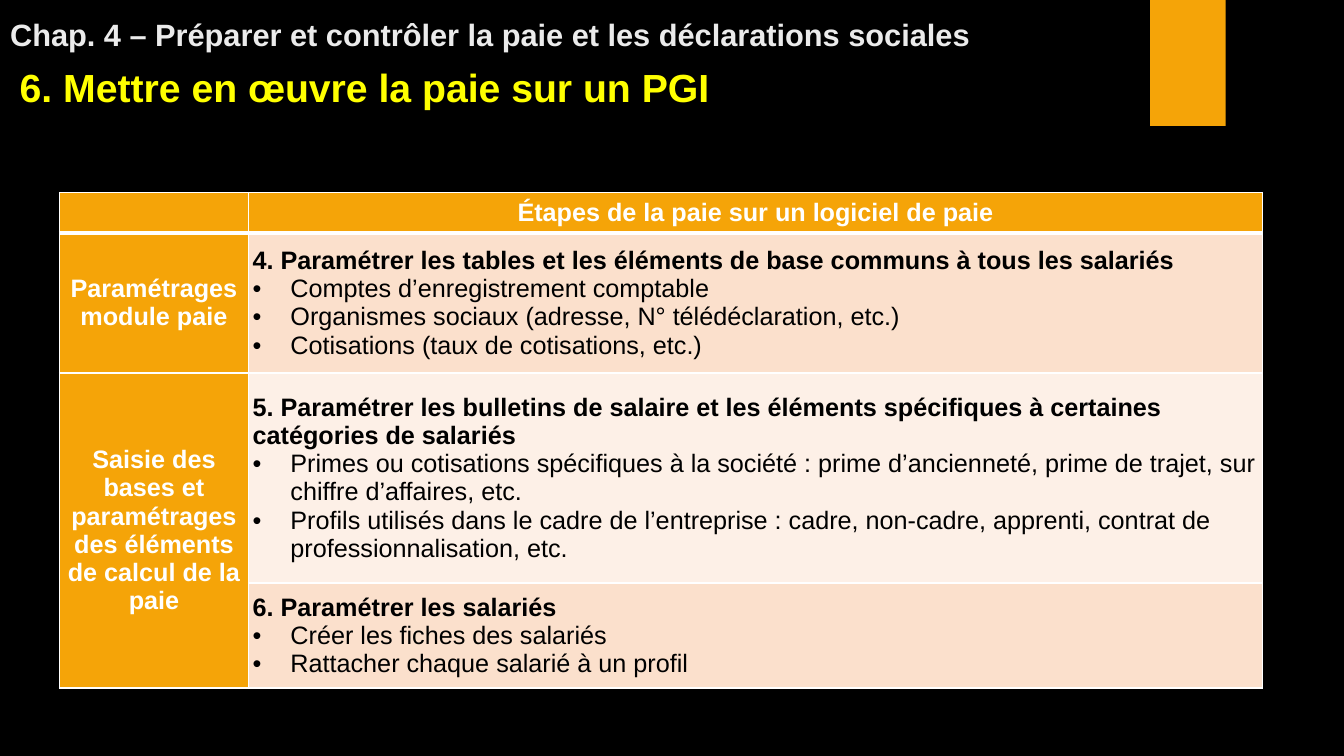
from lxml import etree
from pptx import Presentation
from pptx.dml.color import RGBColor
from pptx.enum.shapes import MSO_SHAPE
from pptx.enum.text import MSO_ANCHOR, PP_ALIGN
from pptx.oxml.ns import qn
from pptx.util import Pt

RECT = MSO_SHAPE.RECTANGLE
MIDDLE, BOTTOM = MSO_ANCHOR.MIDDLE, MSO_ANCHOR.BOTTOM
LEFT, CENTER = PP_ALIGN.LEFT, PP_ALIGN.CENTER
ORANGE, PEACH, CREAM = "F5A408", "FBE0CC", "FDF0E7"
WHITE, BLACK, YELLOW, PALE = "FFFFFF", "000000", "FFFF00", "EBEBEB"
INDENT = 27

STEPS = [
    ("Paramétrages module paie", PEACH,
     "4. Paramétrer les tables et les éléments de base communs à tous les salariés",
     ["Comptes d’enregistrement comptable",
      "Organismes sociaux (adresse, N° télédéclaration, etc.)",
      "Cotisations (taux de cotisations, etc.)"]),
    ("Saisie des bases et paramétrages des éléments de calcul de la paie", CREAM,
     "5. Paramétrer les bulletins de salaire et les éléments spécifiques à certaines "
     "catégories de salariés",
     ["Primes ou cotisations spécifiques à la société : prime d’ancienneté, "
      "prime de trajet, sur chiffre d’affaires, etc.",
      "Profils utilisés dans le cadre de l’entreprise : cadre, non-cadre, "
      "apprenti, contrat de professionnalisation, etc."]),
    ("", PEACH, "6. Paramétrer les salariés",
     ["Créer les fiches des salariés", "Rattacher chaque salarié à un profil"]),
]


def color(code):
    return RGBColor.from_string(code)


def assign(item, values):
    for name, value in values.items():
        setattr(item, name, value)


class Page:
    def __init__(self, deck, font):
        self.font = font
        self.slide = deck.slides.add_slide(deck.slide_layouts[5])
        self.paint(self.slide.background, BLACK)

    def paint(self, item, code):
        item.fill.solid()
        item.fill.fore_color.rgb = color(code)

    def phrase(self, para, text, size, code, bold=True, align=LEFT):
        para.alignment = align
        run = para.add_run()
        run.text = text
        assign(run.font, {"name": self.font, "size": Pt(size), "bold": bold})
        run.font.color.rgb = color(code)

    def title(self, text, box, size, code):
        shape = self.slide.shapes.title
        assign(shape, dict(zip(("left", "top", "width", "height"), map(Pt, box))))
        assign(shape.text_frame, {"vertical_anchor": BOTTOM, "word_wrap": True})
        self.phrase(shape.text_frame.paragraphs[0], text, size, code)

    def text(self, text, box, size, code):
        frame = self.slide.shapes.add_textbox(*map(Pt, box)).text_frame
        frame.word_wrap = True
        self.phrase(frame.paragraphs[0], text, size, code)

    def block(self, box, code):
        shape = self.slide.shapes.add_shape(RECT, *map(Pt, box))
        shape.shadow.inherit = False
        self.paint(shape, code)
        shape.line.fill.background()

    def table(self, box, cols, rows):
        grid = self.slide.shapes.add_table(len(rows), len(cols), *map(Pt, box)).table
        for col, width in zip(grid.columns, cols):
            col.width = Pt(width)
        for row, height in zip(grid.rows, rows):
            row.height = Pt(height)
        return grid

    def cell(self, cell, code, top=1, bottom=1):
        """Set margins, white borders and fill of a table cell."""
        assign(cell, {"vertical_anchor": MIDDLE, "margin_left": Pt(3), "margin_right": Pt(3),
                      "margin_top": 0, "margin_bottom": 0})
        props = cell._tc.get_or_add_tcPr()
        for side, width in {"L": 1, "R": 1, "T": top, "B": bottom}.items():
            line = etree.SubElement(props, qn("a:ln" + side), w=str(Pt(width)))
            fill = etree.SubElement(line, qn("a:solidFill"))
            etree.SubElement(fill, qn("a:srgbClr"), val=WHITE)
        self.paint(cell, code)

    def label(self, cell, text):
        self.phrase(cell.text_frame.paragraphs[0], text, 18, WHITE, align=CENTER)

    def points(self, cell, head, items):
        frame = cell.text_frame
        self.phrase(frame.paragraphs[0], head, 18, BLACK)
        for item in items:
            para = frame.add_paragraph()
            props = para._p.get_or_add_pPr()
            props.set("marL", str(Pt(INDENT)))
            props.set("indent", str(-Pt(INDENT)))
            etree.SubElement(props, qn("a:buFont"), typeface=self.font)
            etree.SubElement(props, qn("a:buChar"), char="•")
            self.phrase(para, item, 18, BLACK, bold=False)


def main():
    deck = Presentation()
    assign(deck, {"slide_width": Pt(960), "slide_height": Pt(540)})
    page = Page(deck, "Arial")
    page.block((821.5, 0, 54, 90), ORANGE)
    page.title("Chap. 4 – Préparer et contrôler la paie et les déclarations sociales",
               (0, -1.5, 916, 43), 22, PALE)
    page.text("6. Mettre en œuvre la paie sur un PGI", (7, 42, 595.5, 41), 28, YELLOW)

    grid = page.table((42.5, 137.5, 859.5, 354), (135, 724.5), (29, 100, 150, 75))
    for col in range(2):
        page.cell(grid.cell(0, col), ORANGE, bottom=3)
    page.label(grid.cell(0, 1), "Étapes de la paie sur un logiciel de paie")
    for row, (name, tint, head, items) in enumerate(STEPS, 1):
        side, body = grid.cell(row, 0), grid.cell(row, 1)
        top = 3 if row == 1 else 1
        page.cell(side, ORANGE, top)
        page.cell(body, tint, top)
        if name:
            page.label(side, name)
        page.points(body, head, items)
    grid.cell(2, 0).merge(grid.cell(3, 0))
    deck.save("out.pptx")


if __name__ == "__main__":
    main()
